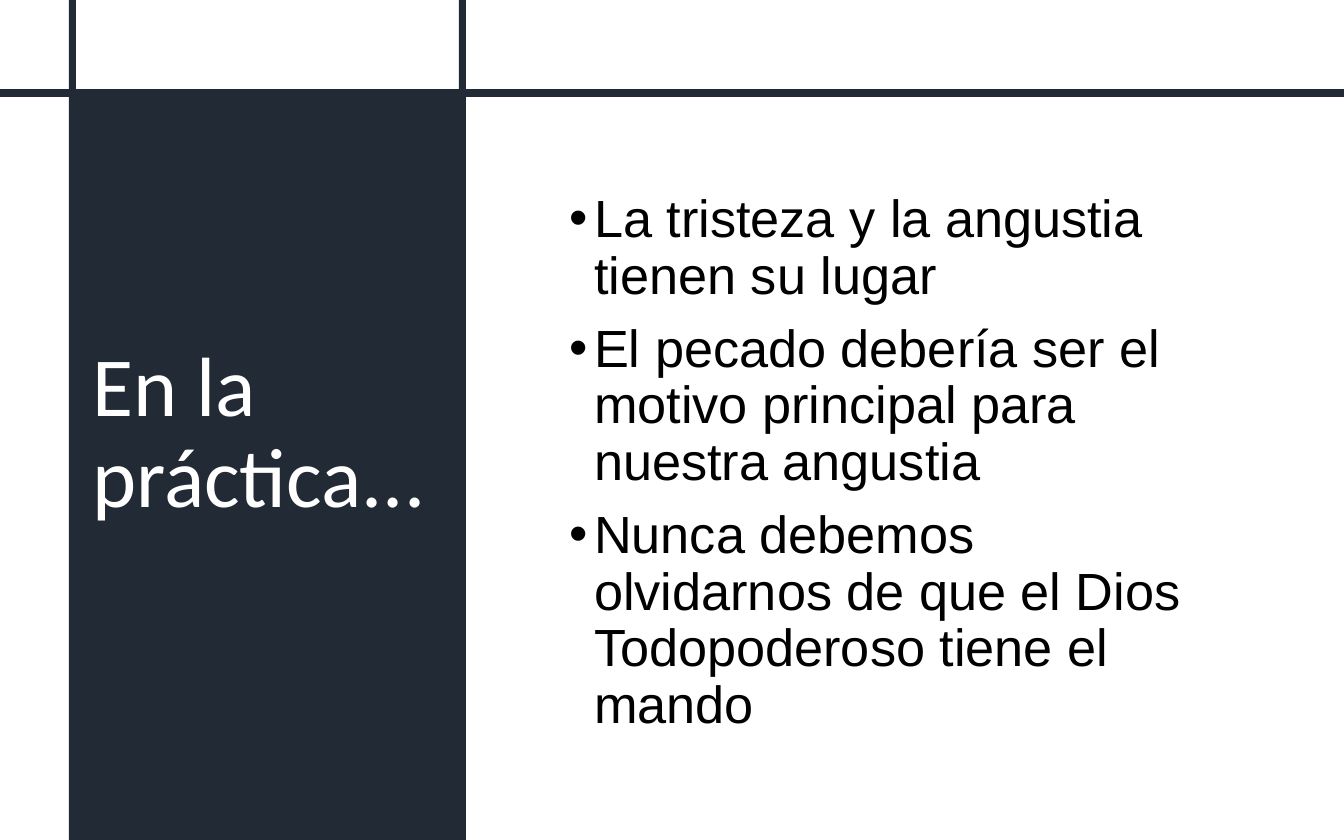
"""Build the slide "En la práctica..." with a dark title panel and three points."""
from typing import Any, NamedTuple

from lxml.etree import SubElement
from pptx import Presentation
from pptx.dml.color import RGBColor
from pptx.enum.shapes import MSO_SHAPE
from pptx.enum.text import MSO_ANCHOR, MSO_AUTO_SIZE, PP_ALIGN
from pptx.oxml.ns import qn
from pptx.util import Emu, Pt

EMU_PER_PX = 914400 / 134.4
WIDTH, HEIGHT = 1344, 840
BAR = 7
BULLET_INDENT = 25
COLORS = {"navy": "222A35", "white": "FFFFFF", "black": "000000"}


class Box(NamedTuple):
    left: int
    top: int
    width: int
    height: int


class TextStyle(NamedTuple):
    font: str
    size: int
    color: str
    space_before: int


TITLE = "En la\vpráctica..."
POINTS = [
    "La tristeza y la angustia tienen su lugar",
    "El pecado debería ser el motivo principal para nuestra angustia",
    "Nunca debemos olvidarnos de que el Dios Todopoderoso tiene el mando",
]
TITLE_BOX = Box(79, 118, 379, 633)
POINTS_BOX = Box(556, 176, 646, 575)
TITLE_STYLE = TextStyle("Calibri", 45, "white", 0)
POINT_STYLE = TextStyle("Arial", 28, "black", 9)
PANEL = Box(73, 95, 392, HEIGHT - 95)
RULES = [
    Box(69, 0, BAR, HEIGHT),
    Box(0, 89, WIDTH, BAR + 1),
    Box(459, 0, BAR, HEIGHT),
]


def px(length: int) -> Emu:
    return Emu(round(length * EMU_PER_PX))


def set_all(target: Any, values: dict[str, Any]) -> None:
    for name, value in values.items():
        setattr(target, name, value)


def draw_band(slide: Any, box: Box) -> None:
    band = slide.shapes.add_shape(MSO_SHAPE.RECTANGLE, *map(px, box))
    band.shadow.inherit = False
    band.fill.solid()
    band.fill.fore_color.rgb = RGBColor.from_string(COLORS["navy"])
    band.line.fill.background()


def write_text(holder: Any, lines: list[str], style: TextStyle) -> None:
    frame = holder.text_frame
    set_all(frame, {
        "text": "\n".join(lines),
        "word_wrap": True,
        "auto_size": MSO_AUTO_SIZE.NONE,
        "vertical_anchor": MSO_ANCHOR.MIDDLE,
    })
    for paragraph in frame.paragraphs:
        set_all(paragraph, {
            "alignment": PP_ALIGN.LEFT,
            "line_spacing": 0.9,
            "space_before": Pt(style.space_before),
        })
        for run in paragraph.runs:
            set_all(run.font, {"name": style.font, "size": Pt(style.size)})
            run.font.color.rgb = RGBColor.from_string(COLORS[style.color])


def add_bullets(holder: Any) -> None:
    indent = px(BULLET_INDENT)
    for paragraph in holder.text_frame.paragraphs:
        properties = paragraph._p.get_or_add_pPr()
        properties.set("marL", str(indent))
        properties.set("indent", str(-indent))
        SubElement(properties, qn("a:buFont"), typeface="Arial")
        SubElement(properties, qn("a:buChar"), char="•")


def main() -> None:
    deck = Presentation()
    set_all(deck, {"slide_width": px(WIDTH), "slide_height": px(HEIGHT)})
    slide = deck.slides.add_slide(deck.slide_layouts[5])

    draw_band(slide, PANEL)
    title = slide.shapes.title
    set_all(title, {name: px(length) for name, length in TITLE_BOX._asdict().items()})
    write_text(title, [TITLE], TITLE_STYLE)
    slide.shapes._spTree.append(title._element)

    for rule in RULES:
        draw_band(slide, rule)

    points = slide.shapes.add_textbox(*map(px, POINTS_BOX))
    write_text(points, POINTS, POINT_STYLE)
    add_bullets(points)

    deck.save("out.pptx")


if __name__ == "__main__":
    main()
